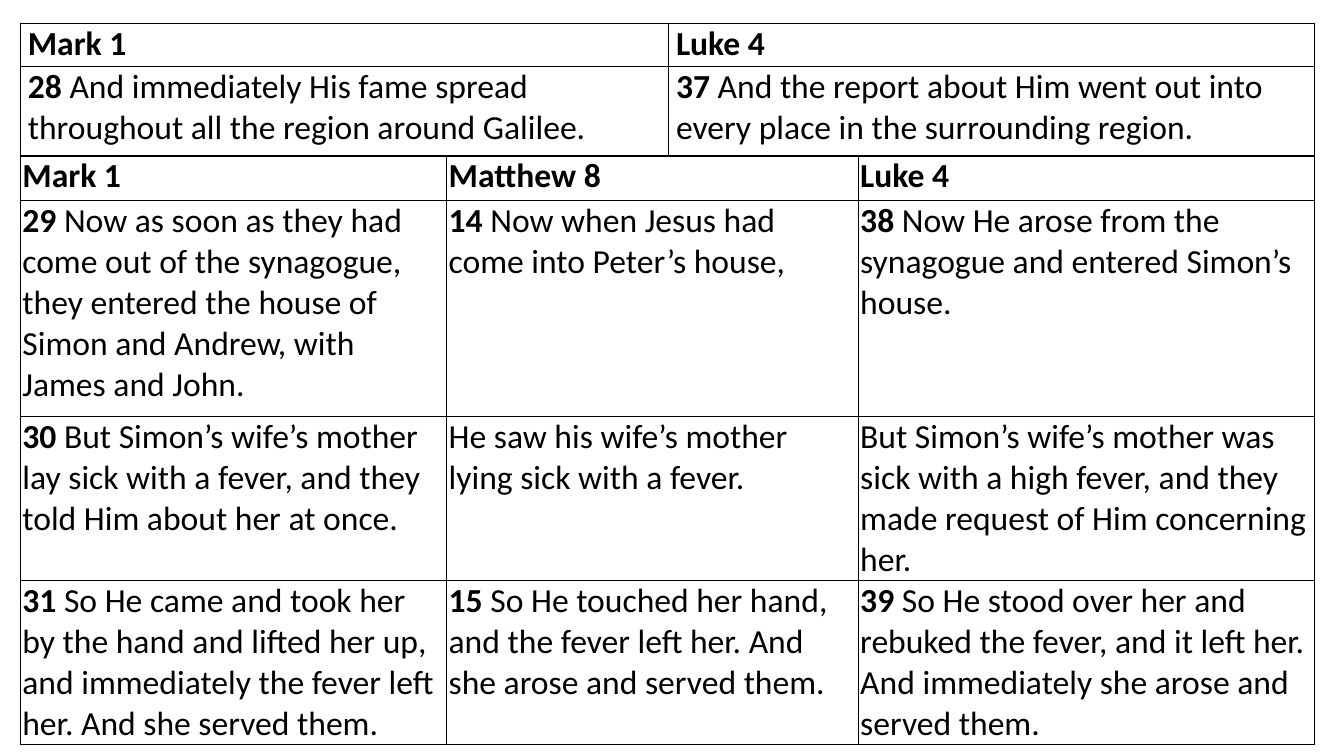
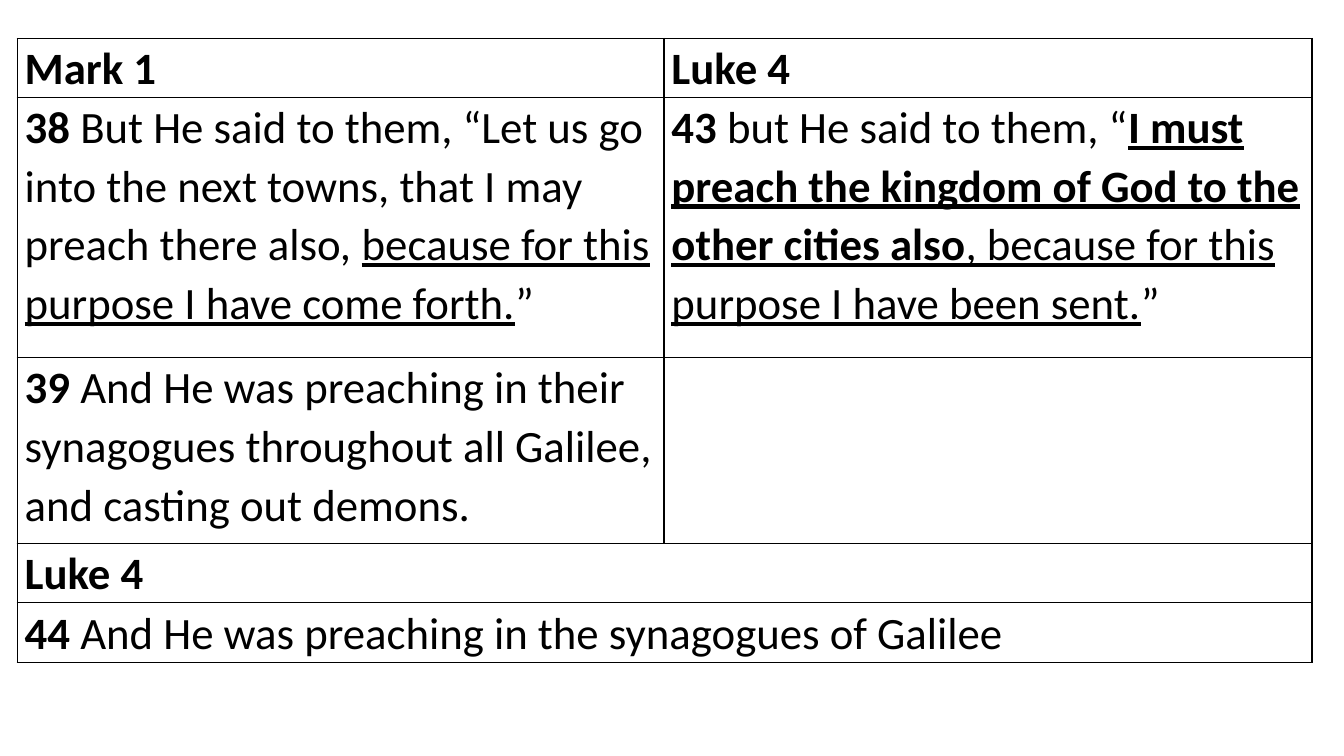
from lxml import etree
from pptx import Presentation
from pptx import util as u
from pptx.dml import color
from pptx.oxml import ns

INK, PAPER = "000000", "FFFFFF"
FONT = "Calibri"
BORDER_WIDTH = 1
PLAIN = {"bold": False, "underline": False}
BOLD = {"bold": True, "underline": False}
UNDERLINED = {"bold": False, "underline": True}
STRONG = {"bold": True, "underline": True}


def rgb(value):
    return color.RGBColor.from_string(value)


# Cell contents: each cell is a list of (text, format) runs
def headings(*names):
    return [[(name, BOLD)] for name in names]


def verse(number, *runs):
    parts = [(run, PLAIN) if isinstance(run, str) else run for run in runs]
    return [(number + " ", BOLD)] + parts


def add_borders(cell):
    properties = cell._tc.get_or_add_tcPr()
    for side in ("lnL", "lnR", "lnT", "lnB"):
        line = etree.SubElement(properties, ns.qn("a:" + side), w=str(u.Pt(BORDER_WIDTH)))
        fill = etree.SubElement(line, ns.qn("a:solidFill"))
        etree.SubElement(fill, ns.qn("a:srgbClr"), val=INK)


def fill_cell(cell, runs, size, inset, line_spacing):
    margins = {"margin_left": u.Pt(inset), "margin_right": u.Pt(inset),
               "margin_top": 0, "margin_bottom": 0}
    for name, value in margins.items():
        setattr(cell, name, value)
    add_borders(cell)
    cell.fill.solid()
    cell.fill.fore_color.rgb = rgb(PAPER)
    paragraph = cell.text_frame.paragraphs[0]
    paragraph.line_spacing = line_spacing
    paragraph.font.size = u.Pt(size)
    for content, style in runs:
        run = paragraph.add_run()
        run.text = content
        run.font.color.rgb = rgb(INK)
        for name, value in {"name": FONT, "size": u.Pt(size), **style}.items():
            setattr(run.font, name, value)


def add_verse_table(slide, left, top, widths, heights, rows, size, inset, line_spacing=1.0):
    """Draw one table and return the position of its lower edge."""
    shape = slide.shapes.add_table(len(rows), len(widths), u.Pt(left), u.Pt(top),
                                   u.Pt(sum(widths)), u.Pt(sum(heights)))
    table = shape.table
    table.first_row = table.horz_banding = False
    for column, width in zip(table.columns, widths):
        column.width = u.Pt(width)
    for row, height, contents in zip(table.rows, heights, rows):
        row.height = u.Pt(height)
        for cell, runs in zip(row.cells, contents):
            fill_cell(cell, runs, size, inset, line_spacing)
    return top + sum(heights)


def add_comparison_slide(presentation, left, top, tables, **text_format):
    """Stack the tables directly under one another."""
    slide = presentation.slides.add_slide(presentation.slide_layouts[6])
    for table in tables:
        top = add_verse_table(slide, left, top, **{**text_format, **table})


# Healing of Simon's wife's mother
FAME = {
    "widths": [463, 461.5], "heights": [31, 64], "inset": 5.4,
    "rows": [
        headings("Mark 1", "Luke 4"),
        [verse("28", "And immediately His fame spread throughout all the region around Galilee."),
         verse("37", "And the report about Him went out into every place in the surrounding region.")],
    ],
}
HEALING = {
    "widths": [304.5, 294, 326], "heights": [31.5, 154.5, 117, 117], "inset": 1.5,
    "rows": [
        headings("Mark 1", "Matthew 8", "Luke 4"),
        [verse("29", "Now as soon as they had come out of the synagogue, they entered "
                     "the house of Simon and Andrew, with James and John."),
         verse("14", "Now when Jesus had come into Peter’s house,"),
         verse("38", "Now He arose from the synagogue and entered Simon’s house.")],
        [verse("30", "But Simon’s wife’s mother lay sick with a fever, "
                     "and they told Him about her at once."),
         [("He saw his wife’s mother lying sick with a fever.", PLAIN)],
         [("But Simon’s wife’s mother was sick with a high fever, "
           "and they made request of Him concerning her.", PLAIN)]],
        [verse("31", "So He came and took her by the hand and lifted her up, "
                     "and immediately the fever left her. And she served them."),
         verse("15", "So He touched her hand, and the fever left her. "
                     "And she arose and served them."),
         verse("39", "So He stood over her and rebuked the fever, and it left her. "
                     "And immediately she arose and served them.")],
    ],
}

# Preaching in Galilee
PURPOSE = {
    "widths": [462, 463], "heights": [41.5, 186, 133],
    "rows": [
        headings("Mark 1", "Luke 4"),
        [verse("38", "But He said to them, “Let us go into the next towns, "
                     "that I may preach there also, ",
               ("because for this purpose I have come forth.", UNDERLINED), "”"),
         verse("43", "but He said to them, “",
               ("I must preach the kingdom of God to the other cities also", STRONG),
               (", because for this purpose I have been sent.", UNDERLINED), "”")],
        [verse("39", "And He was preaching in their synagogues throughout all Galilee, "
                     "and casting out demons."),
         []],
    ],
}
GALILEE = {
    "widths": [925], "heights": [42.5, 42.5],
    "rows": [
        headings("Luke 4"),
        [verse("44", "And He was preaching in the synagogues of Galilee")],
    ],
}


def main():
    presentation = Presentation()
    presentation.slide_width, presentation.slide_height = u.Pt(960), u.Pt(540)
    add_comparison_slide(presentation, 14.5, 16.5, [FAME, HEALING], size=24)
    add_comparison_slide(presentation, 12.25, 27.5, [PURPOSE, GALILEE],
                         size=32, inset=5.4, line_spacing=1.07)
    presentation.save("out.pptx")


if __name__ == "__main__":
    main()
